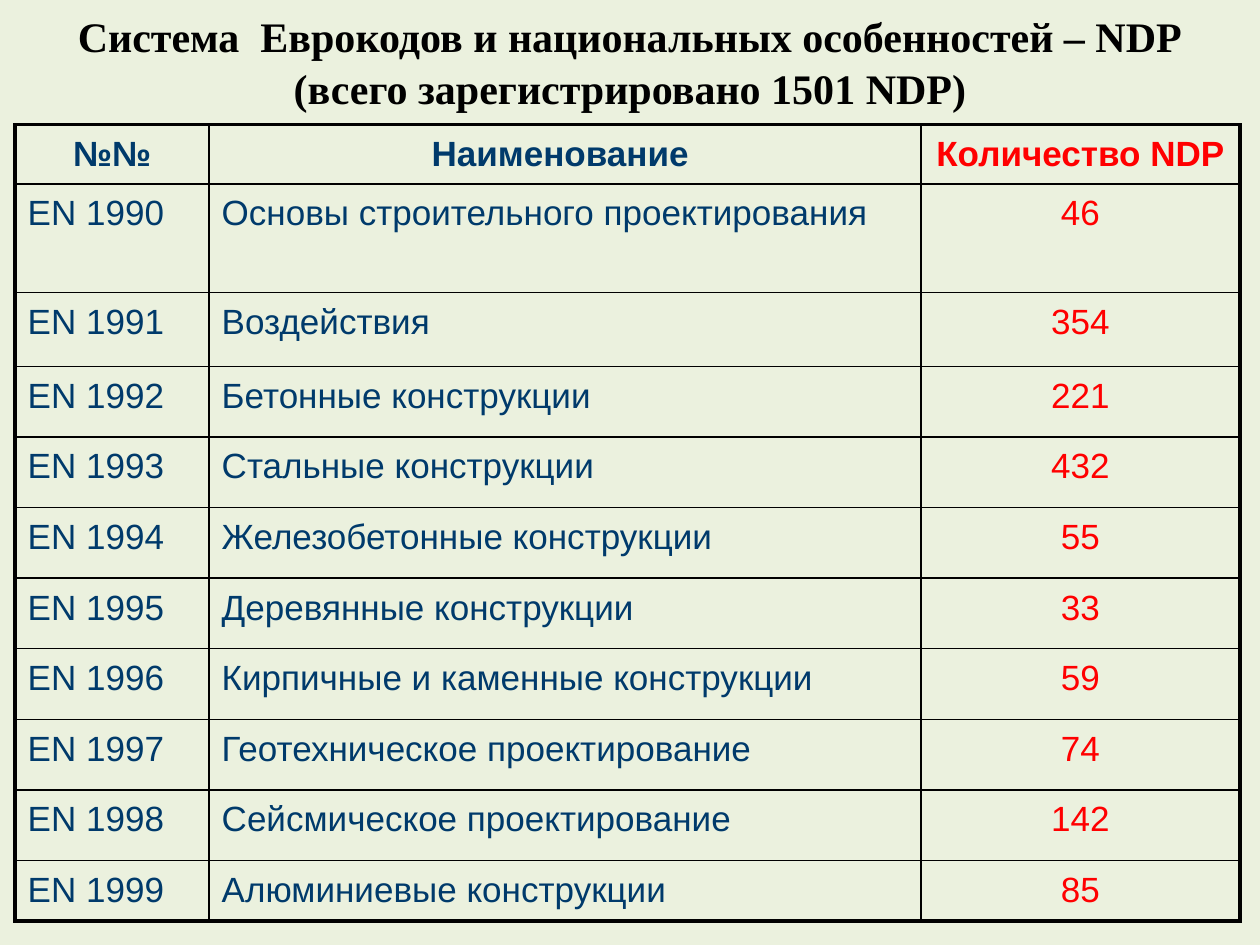
from pptx import Presentation
from pptx.dml.color import RGBColor
from pptx.enum.text import PP_ALIGN
from pptx.oxml import parse_xml
from pptx.oxml.ns import nsdecls
from pptx.util import Inches, Pt

LEFT, CENTER = PP_ALIGN.LEFT, PP_ALIGN.CENTER
COLORS = {"paper": "EBF1DE", "ink": "000000", "navy": "003A6B", "red": "FF0000"}
WIDTH, HEIGHT = 10, 7.5
THIN, THICK = 1, 2.25

TITLE = [
    "Система  Еврокодов и национальных особенностей – NDP",
    "(всего зарегистрировано 1501 NDP)",
]
HEADER = ("№№", "Наименование ", "Количество NDP")
EUROCODES = [
    ("Основы строительного проектирования", 46),
    ("Воздействия", 354),
    ("Бетонные конструкции", 221),
    ("Стальные конструкции", 432),
    ("Железобетонные конструкции", 55),
    ("Деревянные конструкции", 33),
    ("Кирпичные и каменные конструкции", 59),
    ("Геотехническое проектирование", 74),
    ("Сейсмическое проектирование", 142),
    ("Алюминиевые конструкции", 85),
]
COLUMN_WIDTHS = [1.54, 5.65, 2.53]
ROW_HEIGHTS = [0.47, 0.86, 0.59] + [0.56] * 7 + [0.48]


class EurocodeSlide:
    """Holds the slide and the style of its title and table."""

    def __init__(self, deck):
        self.slide = deck.slides.add_slide(deck.slide_layouts[6])
        background = self.slide.background.fill
        background.solid()
        background.fore_color.rgb = RGBColor.from_string(COLORS["paper"])

    def style(self, paragraph, font_name, size, color, bold, align):
        paragraph.alignment = align
        font = paragraph.font
        font.name, font.size, font.bold = font_name, Pt(size), bold
        font.color.rgb = RGBColor.from_string(COLORS[color])

    def title(self, lines, left, top, width, height):
        box = self.slide.shapes.add_textbox(
            Inches(left * WIDTH), Inches(top * HEIGHT),
            Inches(width * WIDTH), Inches(height * HEIGHT))
        frame = box.text_frame
        frame.word_wrap = True
        frame.margin_top = Inches(0.08)
        frame.text = "\n".join(lines)
        for paragraph in frame.paragraphs:
            paragraph.space_before = Pt(1)
            self.style(paragraph, "Times New Roman", 24, "ink", True, CENTER)

    def borders(self, cell, weights):
        properties = cell._tc.get_or_add_tcPr()
        for position, (side, weight) in enumerate(zip("LRTB", weights)):
            line = parse_xml(
                f'<a:ln{side} {nsdecls("a")} w="{Pt(weight)}"><a:solidFill>'
                f'<a:srgbClr val="{COLORS["ink"]}"/></a:solidFill></a:ln{side}>')
            properties.insert(position, line)

    def table(self, rows, left, top, widths, heights):
        table = self.slide.shapes.add_table(
            len(rows), len(widths), Inches(left * WIDTH), Inches(top * HEIGHT),
            Inches(sum(widths)), Inches(sum(heights))).table
        table.first_row = table.horz_banding = False
        for column, width in zip(table.columns, widths):
            column.width = Inches(width)
        last_row, last_column = len(rows) - 1, len(widths) - 1
        for r, (values, height) in enumerate(zip(rows, heights)):
            table.rows[r].height = Inches(height)
            for c, value in enumerate(values):
                cell = table.cell(r, c)
                cell.text = str(value)
                cell.fill.background()
                paragraph = cell.text_frame.paragraphs[0]
                paragraph.line_spacing = 1.1
                color = "red" if c == last_column else "navy"
                align = CENTER if r == 0 or c == last_column else LEFT
                self.style(paragraph, "Arial", 20, color, r == 0, align)
                outer = (c == 0, c == last_column, r == 0, r == last_row)
                self.borders(cell, [THICK if edge else THIN for edge in outer])


def main():
    deck = Presentation()
    deck.slide_width, deck.slide_height = Inches(WIDTH), Inches(HEIGHT)
    page = EurocodeSlide(deck)
    page.title(TITLE, 0, 0, 1, 0.09)
    rows = [HEADER] + [
        (f"EN {number}", name, count)
        for number, (name, count) in enumerate(EUROCODES, 1990)]
    page.table(rows, 0.012, 0.132, COLUMN_WIDTHS, ROW_HEIGHTS)
    deck.save("out.pptx")


if __name__ == "__main__":
    main()
